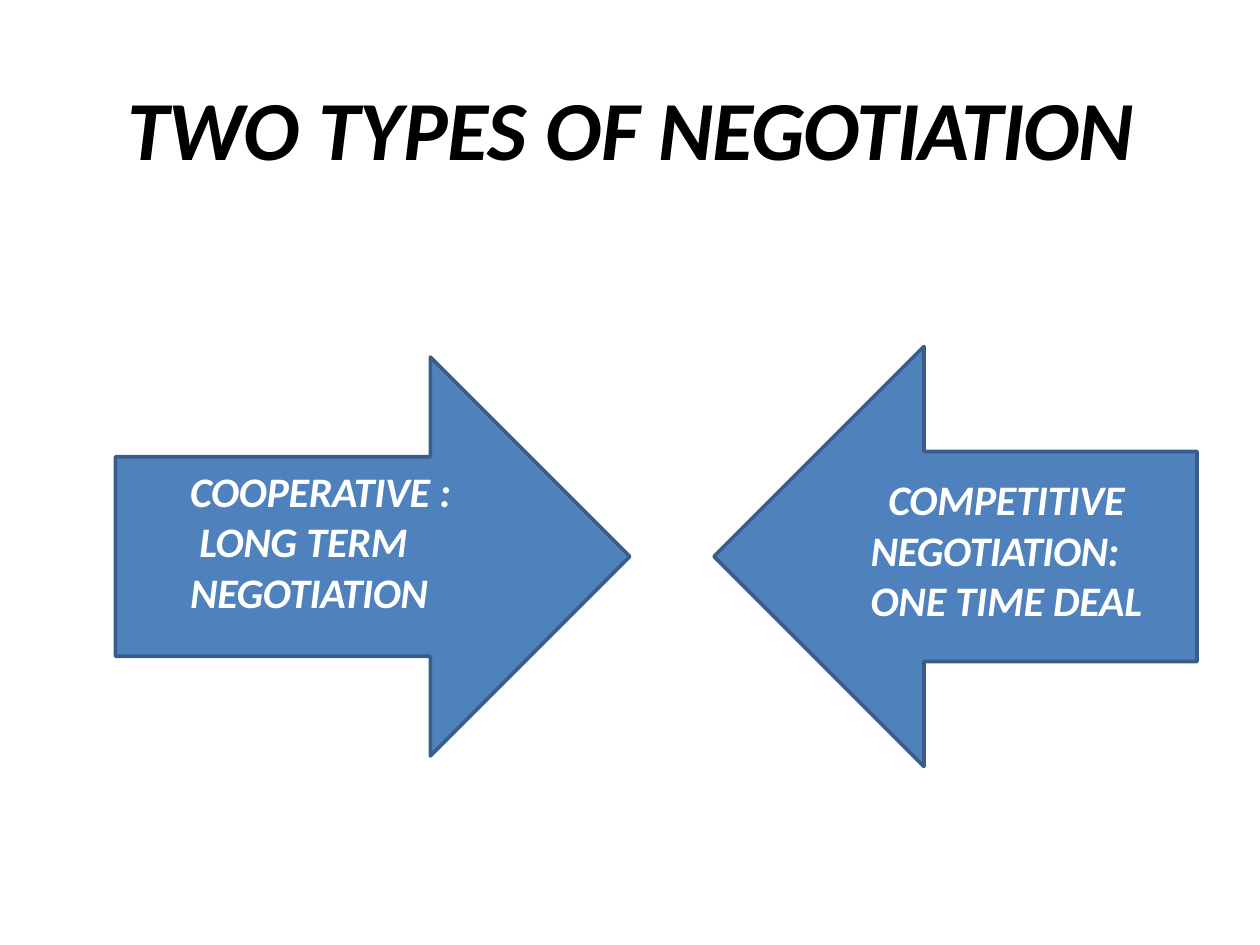
from pptx import Presentation
from pptx import util as u
from pptx.dml.color import RGBColor
from pptx.enum import shapes, text


def color(value):
    return RGBColor.from_string(value)


class Board:
    columns, rows = 120, 90
    font = "Calibri"
    fill, outline = "4F81BC", "385D89"

    def __init__(self, presentation):
        self.width = presentation.slide_width
        self.height = presentation.slide_height
        self.slide = presentation.slides.add_slide(presentation.slide_layouts[6])

    def place(self, column, row, width, height):
        return (
            round(column * self.width / self.columns),
            round(row * self.height / self.rows),
            round(width * self.width / self.columns),
            round(height * self.height / self.rows),
        )

    def arrow(self, kind, *area):
        shape = self.slide.shapes.add_shape(kind, *self.place(*area))
        shape.shadow.inherit = False
        shape.fill.solid()
        shape.fill.fore_color.rgb = color(self.fill)
        shape.line.color.rgb = color(self.outline)
        shape.line.width = u.Pt(2.04)

    def label(self, lines, area, size, ink, align=text.PP_ALIGN.LEFT,
              anchor=text.MSO_ANCHOR.TOP, indent=0):
        frame = self.slide.shapes.add_textbox(*self.place(*area)).text_frame
        frame.word_wrap = True
        frame.vertical_anchor = anchor
        frame.margin_left = frame.margin_right = frame.margin_bottom = 0
        frame.margin_top = u.Inches(0.01)
        paragraph = frame.paragraphs[0]
        paragraph.alignment = align
        paragraph.space_before = u.Pt(1)
        properties = paragraph._p.get_or_add_pPr()
        properties.set("marL", str(u.Inches(0.01)))
        properties.set("indent", str(u.Inches(indent)))
        for number, line in enumerate(lines):
            if number:
                paragraph.add_line_break()
            for words, spacing in line:
                run = paragraph.add_run()
                run.text = words
                run.font.name = self.font
                run.font.size = u.Pt(size)
                run.font.bold = run.font.italic = True
                run.font.color.rgb = color(ink)
                run._r.get_or_add_rPr().set("spc", str(round(spacing * 100)))


def main():
    presentation = Presentation()
    presentation.slide_width = u.Inches(10)
    presentation.slide_height = u.Inches(7.5)
    board = Board(presentation)

    title = [[("TWO ", -0.2), ("TYPES OF ", -0.1), ("NEGOTIATION", -0.6)]]
    board.label(title, (11.25, 7, 97.5, 10), 48, "000000",
                text.PP_ALIGN.CENTER, text.MSO_ANCHOR.MIDDLE)

    board.arrow(shapes.MSO_SHAPE.RIGHT_ARROW, 11, 34, 49, 38)
    board.arrow(shapes.MSO_SHAPE.LEFT_ARROW, 68, 33, 46, 40)

    competitive = [
        [("COMPETITIVE", -0.1)],
        [("NEGOTIATION:", -0.3)],
        [("ONE TIME DEAL", -0.1)],
    ]
    cooperative = [
        [("COOPERATIVE ", -0.2), (":", 0)],
        [(" LONG ", -0.2), ("TERM", -0.1)],
        [("NEGOTIATION", -0.3)],
    ]
    board.label(competitive, (82.8, 45, 26.4, 14.8), 24, "FFFFFF", indent=0.14)
    board.label(cooperative, (18, 44.2, 25.6, 14.8), 24, "FFFFFF")

    presentation.save("out.pptx")


if __name__ == "__main__":
    main()
